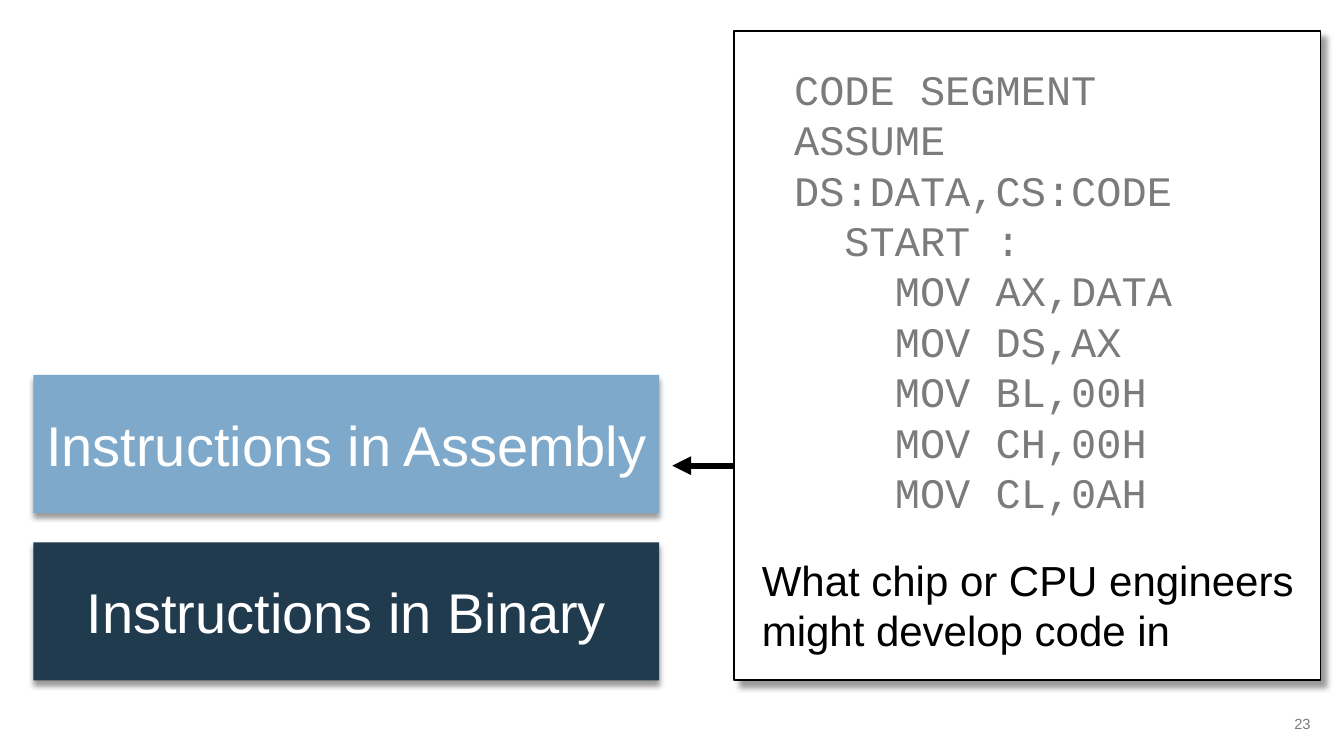
from dataclasses import dataclass
from typing import Optional

from lxml.etree import SubElement
from pptx import Presentation
from pptx.dml.color import RGBColor
from pptx.enum.shapes import MSO_CONNECTOR, MSO_SHAPE
from pptx.enum.text import MSO_ANCHOR, PP_ALIGN
from pptx.oxml.ns import qn
from pptx.util import Pt

BLACK = RGBColor(0x00, 0x00, 0x00)
WHITE = RGBColor(0xFF, 0xFF, 0xFF)
GREY = RGBColor(0x7B, 0x7B, 0x7B)
NAVY = RGBColor(0x20, 0x3A, 0x4E)
SKY = RGBColor(0x7E, 0xA9, 0xCA)


@dataclass(frozen=True)
class Area:
    left: float
    top: float
    width: float
    height: float

    def lengths(self) -> list[Pt]:
        return [Pt(value) for value in (self.left, self.top, self.width, self.height)]


@dataclass(frozen=True)
class Layer:
    label: str
    fill: RGBColor
    top: float


LAYERS = [
    Layer("Instructions in Binary", NAVY, 387.36),
    Layer("Instructions in Assembly", SKY, 267.84),
]
PANEL = Area(524.16, 22.32, 419.04, 463.68)
CODE = """CODE SEGMENT
ASSUME DS:DATA,CS:CODE
  START :
    MOV AX,DATA
    MOV DS,AX
    MOV BL,00H
    MOV CH,00H
    MOV CL,0AH"""


def write(box, text: str, *, size: float, color: RGBColor, font: str = "Arial",
          align: PP_ALIGN = PP_ALIGN.LEFT, anchor: MSO_ANCHOR = MSO_ANCHOR.TOP) -> None:
    frame = box.text_frame
    frame.word_wrap = True
    frame.vertical_anchor = anchor
    for index, line in enumerate(text.split("\n")):
        para = frame.add_paragraph() if index else frame.paragraphs[0]
        para.alignment = align
        span = para.add_run()
        span.text = line
        span.font.name = font
        span.font.size = Pt(size)
        span.font.color.rgb = color


def add_text(page, area: Area, text: str, **style) -> None:
    write(page.shapes.add_textbox(*area.lengths()), text, **style)


def add_card(page, area: Area, fill: RGBColor, *, distance: float, angle: int,
             outline: Optional[RGBColor] = None):
    """Add a filled rectangle with a soft shadow."""
    card = page.shapes.add_shape(MSO_SHAPE.RECTANGLE, *area.lengths())
    card.shadow.inherit = False
    card.fill.solid()
    card.fill.fore_color.rgb = fill
    if outline is None:
        card.line.fill.background()
    else:
        card.line.color.rgb = outline
        card.line.width = Pt(1.25)
    effects = card.element.spPr.find(qn("a:effectLst"))
    shadow = SubElement(effects, qn("a:outerShdw"), blurRad=str(Pt(4)),
                        dist=str(Pt(distance)), dir=str(angle * 60000), rotWithShape="0")
    color = SubElement(shadow, qn("a:srgbClr"), val=str(BLACK))
    SubElement(color, qn("a:alpha"), val="40000")
    return card


def add_arrow(page, start: float, end: float, level: float) -> None:
    arrow = page.shapes.add_connector(
        MSO_CONNECTOR.STRAIGHT, Pt(start), Pt(level), Pt(end), Pt(level))
    arrow.line.color.rgb = BLACK
    arrow.line.width = Pt(4.5)
    SubElement(arrow.line._get_or_add_ln(), qn("a:tailEnd"), type="triangle")
    SubElement(arrow._element.spPr, qn("a:effectLst"))


def main() -> None:
    deck = Presentation()
    deck.slide_width, deck.slide_height = Pt(960), Pt(540)
    page = deck.slides.add_slide(deck.slide_layouts[6])

    # Slide number
    add_text(page, Area(840.24, 502.56, 102.96, 28.8), "23", size=10.5, color=GREY,
             align=PP_ALIGN.RIGHT, anchor=MSO_ANCHOR.MIDDLE)

    # Instruction layers
    for layer in LAYERS:
        card = add_card(page, Area(23.76, layer.top, 447.12, 98.64), layer.fill,
                        distance=3, angle=90)
        write(card, layer.label, size=40, color=WHITE,
              align=PP_ALIGN.CENTER, anchor=MSO_ANCHOR.MIDDLE)

    # Code panel, with its arrow starting underneath
    add_arrow(page, 537.12, 480.24, 332.64)
    add_card(page, PANEL, WHITE, distance=6, angle=45, outline=BLACK)
    add_text(page, Area(537.12, 392.4, 406.08, 79.92),
             "What chip or CPU engineers might develop code in", size=30, color=BLACK)
    add_text(page, Area(560.16, 41.76, 360, 334.08), CODE,
             size=30, color=GREY, font="Courier New")

    deck.save("out.pptx")


if __name__ == "__main__":
    main()
